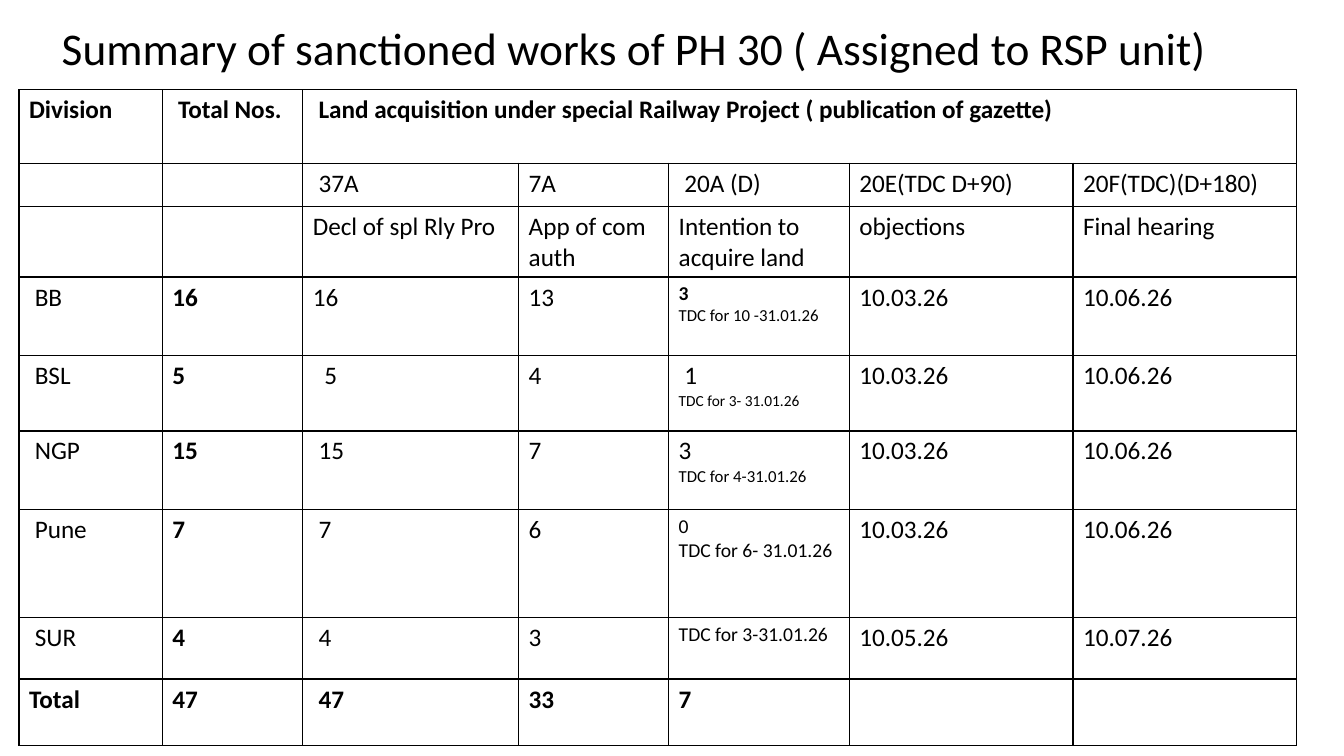
import pptx
import pptx.util
import pptx.dml.color
import pptx.enum.text
import pptx.oxml
import pptx.oxml.ns

Cm = pptx.util.Cm
Pt = pptx.util.Pt

HUES = {"ink": "000000", "paper": "FFFFFF"}

COLS = [3.61, 3.54, 5.44, 3.78, 4.55, 5.64, 5.64]
ROWS = [1.85, 1.09, 1.73, 1.98, 1.9, 1.98, 2.72, 1.55, 1.68]

CELLS = [
    ["Division", " Total Nos.",
     " Land acquisition under special Railway Project ( publication of gazette)",
     "", "", "", ""],
    ["", "", " 37A", "7A", " 20A (D)", "20E(TDC D+90)", "20F(TDC)(D+180)"],
    ["", "", "Decl of spl Rly Pro", "App of com auth",
     "Intention to acquire land", "objections", "Final hearing"],
    [" BB", "16", "16", "13",
     [("3", 14, True), ("TDC for 10 -31.01.26", 12, False)],
     "10.03.26", "10.06.26"],
    [" BSL", "5", " 5", "4",
     [(" 1", 18, False), ("TDC for 3- 31.01.26", 11, False)],
     "10.03.26", "10.06.26"],
    [" NGP", "15", " 15", "7",
     [("3", 18, False), ("TDC for 4-31.01.26", 12, False)],
     "10.03.26", "10.06.26"],
    [" Pune", "7", " 7", "6",
     [("0", 14, False), ("TDC for 6- 31.01.26", 14, False)],
     "10.03.26", "10.06.26"],
    [" SUR", "4", " 4", "3", [("TDC for 3-31.01.26", 14, False)],
     "10.05.26", "10.07.26"],
    ["Total", "47", " 47", "33", "7", "", ""],
]


class Deck:
    def __init__(self, slide, font, hues):
        self.slide = slide
        self.font = font
        self.hues = hues

    def hue(self, name):
        return pptx.dml.color.RGBColor.from_string(self.hues[name])

    def run(self, para, text, size, bold=False):
        run = para.add_run()
        run.text = text
        run.font.name = self.font
        run.font.size = Pt(size)
        run.font.bold = bold
        run.font.color.rgb = self.hue("ink")

    def title(self, left, top, width, height, runs):
        box = self.slide.shapes.add_textbox(Cm(left), Cm(top), Cm(width), Cm(height))
        frame = box.text_frame
        frame.word_wrap = True
        frame.vertical_anchor = pptx.enum.text.MSO_ANCHOR.MIDDLE
        para = frame.paragraphs[0]
        para.line_spacing = 0.9
        for text, size in runs:
            self.run(para, text, size)

    def edge(self, cell, width):
        props = cell._tc.get_or_add_tcPr()
        for side in ("lnL", "lnR", "lnT", "lnB"):
            props.append(pptx.oxml.parse_xml(
                f'<a:{side} {pptx.oxml.ns.nsdecls("a")} w="{Pt(width)}"><a:solidFill>'
                f'<a:srgbClr val="{self.hues["ink"]}"/></a:solidFill></a:{side}>'))

    def cell(self, cell, paras):
        self.edge(cell, 1)
        cell.fill.solid()
        cell.fill.fore_color.rgb = self.hue("paper")
        frame = cell.text_frame
        for i, (text, size, bold) in enumerate(paras):
            para = frame.paragraphs[0] if i == 0 else frame.add_paragraph()
            self.run(para, text, size, bold)

    def table(self, left, top, cols, rows, cells):
        grid = self.slide.shapes.add_table(
            len(rows), len(cols), Cm(left), Cm(top), Cm(sum(cols)), Cm(sum(rows))).table
        grid.first_row = False
        grid.horz_banding = False
        for col, width in zip(grid.columns, cols):
            col.width = Cm(width)
        for row, height in zip(grid.rows, rows):
            row.height = Cm(height)
        for r, line in enumerate(cells):
            for c, item in enumerate(line):
                if isinstance(item, str):
                    bold = r in (0, len(rows) - 1) or c == 1
                    item = [(item, 18, bold)] if item else []
                self.cell(grid.cell(r, c), item)
        return grid


def main():
    show = pptx.Presentation()
    show.slide_width = Cm(33.87)
    show.slide_height = Cm(19.05)
    deck = Deck(show.slides.add_slide(show.slide_layouts[6]), "Calibri", HUES)
    deck.title(0.99, 0.3, 31.42, 1.78, [
        (" ", 39.6),
        ("Summary of sanctioned works of PH 30 ( Assigned to RSP unit)", 32.4)])
    grid = deck.table(0.48, 2.26, COLS, ROWS, CELLS)
    grid.cell(0, 2).merge(grid.cell(0, 6))
    grid.cell(4, 2).margin_left = Cm(0.4)
    show.save("out.pptx")


if __name__ == "__main__":
    main()
